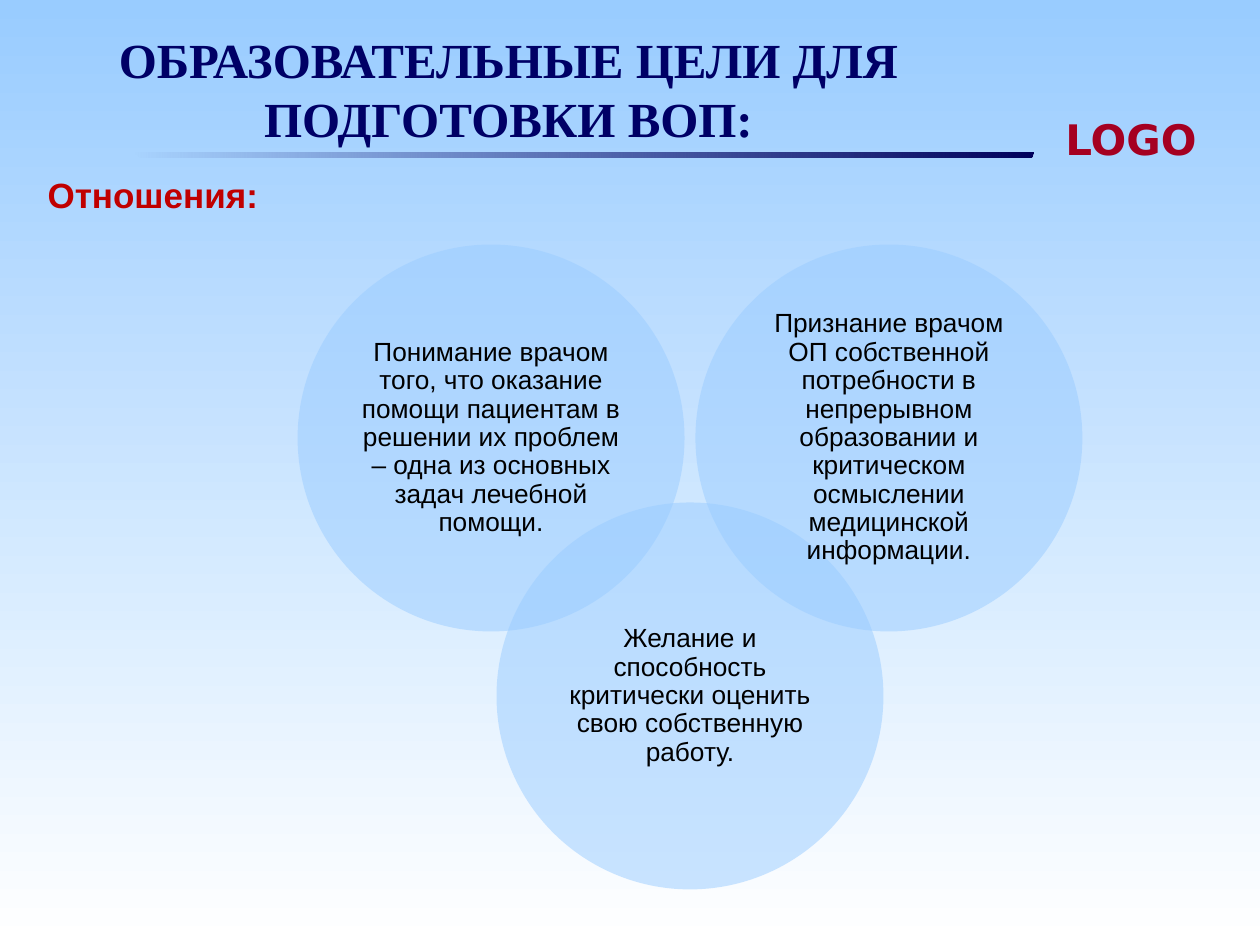
from dataclasses import dataclass

from lxml.etree import SubElement
from pptx import Presentation
from pptx.dml.color import RGBColor
from pptx.enum.shapes import MSO_SHAPE
from pptx.enum.text import MSO_ANCHOR as Anchor, MSO_AUTO_SIZE as AutoSize, PP_ALIGN as Align
from pptx.oxml.ns import qn
from pptx.util import Cm, Pt

SKY, NAVY = "99CCFF", "000066"
DIAMETER = 7.8
LEFT, STEP = 6.0, 4.01
UPPER, LOWER = 4.93, 10.13


@dataclass
class Attitude:
    column: int
    top: float
    text: str


ATTITUDES = [
    Attitude(0, UPPER, "Понимание врачом того, что оказание помощи пациентам "
                       "в решении их проблем – одна из основных задач лечебной помощи."),
    Attitude(1, LOWER, "Желание и способность критически оценить свою собственную работу."),
    Attitude(2, UPPER, "Признание врачом ОП собственной потребности в непрерывном "
                       "образовании и критическом осмыслении медицинской информации."),
]


def color(value: str) -> RGBColor:
    return RGBColor.from_string(value)


def set_alpha(fill_parent, percent: int) -> None:
    """Give the first colour below an element its opacity."""
    srgb = next(fill_parent.iter(qn("a:srgbClr")))
    SubElement(srgb, qn("a:alpha")).set("val", str(percent * 1000))


def set_gradient(fill, start: str, end: str, angle: int) -> None:
    fill.gradient()
    fill.gradient_angle = angle
    for stop, value in zip(fill.gradient_stops, (start, end)):
        stop.color.rgb = color(value)


def write(frame, text: str, size: int, font: str, value: str, bold: bool = False):
    frame.text = text
    paragraph = frame.paragraphs[0]
    run_font = paragraph.runs[0].font
    run_font.size, run_font.name, run_font.bold = Pt(size), font, bold
    run_font.color.rgb = color(value)
    return paragraph


def add_label(slide, left: float, top: float, width: float, height: float,
              text: str, size: int, font: str, value: str) -> None:
    frame = slide.shapes.add_textbox(Cm(left), Cm(top), Cm(width), Cm(height)).text_frame
    frame.word_wrap = True
    write(frame, text, size, font, value, bold=True)


def add_circle(slide, attitude: Attitude) -> None:
    circle = slide.shapes.add_shape(
        MSO_SHAPE.OVAL, Cm(LEFT + attitude.column * STEP), Cm(attitude.top),
        Cm(DIAMETER), Cm(DIAMETER))
    circle.shadow.inherit = False
    circle.line.fill.background()
    circle.fill.solid()
    circle.fill.fore_color.rgb = color(SKY)
    set_alpha(circle.fill._xPr, 50)
    frame = circle.text_frame
    frame.word_wrap = True
    frame.vertical_anchor = Anchor.MIDDLE
    frame.margin_left = frame.margin_right = frame.margin_top = frame.margin_bottom = Cm(0.15)
    paragraph = write(frame, attitude.text, 15, "Arial", "000000")
    paragraph.alignment = Align.CENTER
    paragraph.line_spacing = 0.9
    paragraph.space_after = Pt(5.25)


def add_rule(slide) -> None:
    outline = [(20.83, 3.07), (2.67, 3.07), (2.82, 3.18), (20.78, 3.18)]
    points = [(Cm(x), Cm(y)) for x, y in outline]
    builder = slide.shapes.build_freeform(*points[0])
    builder.add_line_segments(points[1:], close=True)
    rule = builder.convert_to_shape()
    rule.shadow.inherit = False
    rule.line.fill.background()
    set_gradient(rule.fill, NAVY, "00005C", 0)
    set_alpha(rule.fill._xPr, 0)


def main() -> None:
    deck = Presentation()
    deck.slide_width, deck.slide_height = Cm(25.4), Cm(19.05)
    slide = deck.slides.add_slide(deck.slide_layouts[5])
    set_gradient(slide.background.fill, SKY, "FFFFFF", 270)

    # Header
    add_rule(slide)
    add_label(slide, 21.23, 2.16, 3.58, 1.27, "LOGO", 24, "DejaVu Sans", "A50021")
    title = slide.shapes.title
    title.left, title.top, title.width, title.height = Cm(0), Cm(0.91), Cm(20.5), Cm(1.75)
    heading = title.text_frame
    heading.auto_size = AutoSize.NONE
    heading.vertical_anchor = Anchor.MIDDLE
    write(heading, "ОБРАЗОВАТЕЛЬНЫЕ ЦЕЛИ ДЛЯ ПОДГОТОВКИ ВОП:", 28,
          "Times New Roman", NAVY, bold=True).alignment = Align.CENTER

    # Overlapping circles
    for attitude in ATTITUDES:
        add_circle(slide, attitude)

    # Section label
    add_label(slide, 0.71, 3.38, 5.0, 1.12, "Отношения:", 20, "Arial", "C00000")
    deck.save("out.pptx")


if __name__ == "__main__":
    main()
